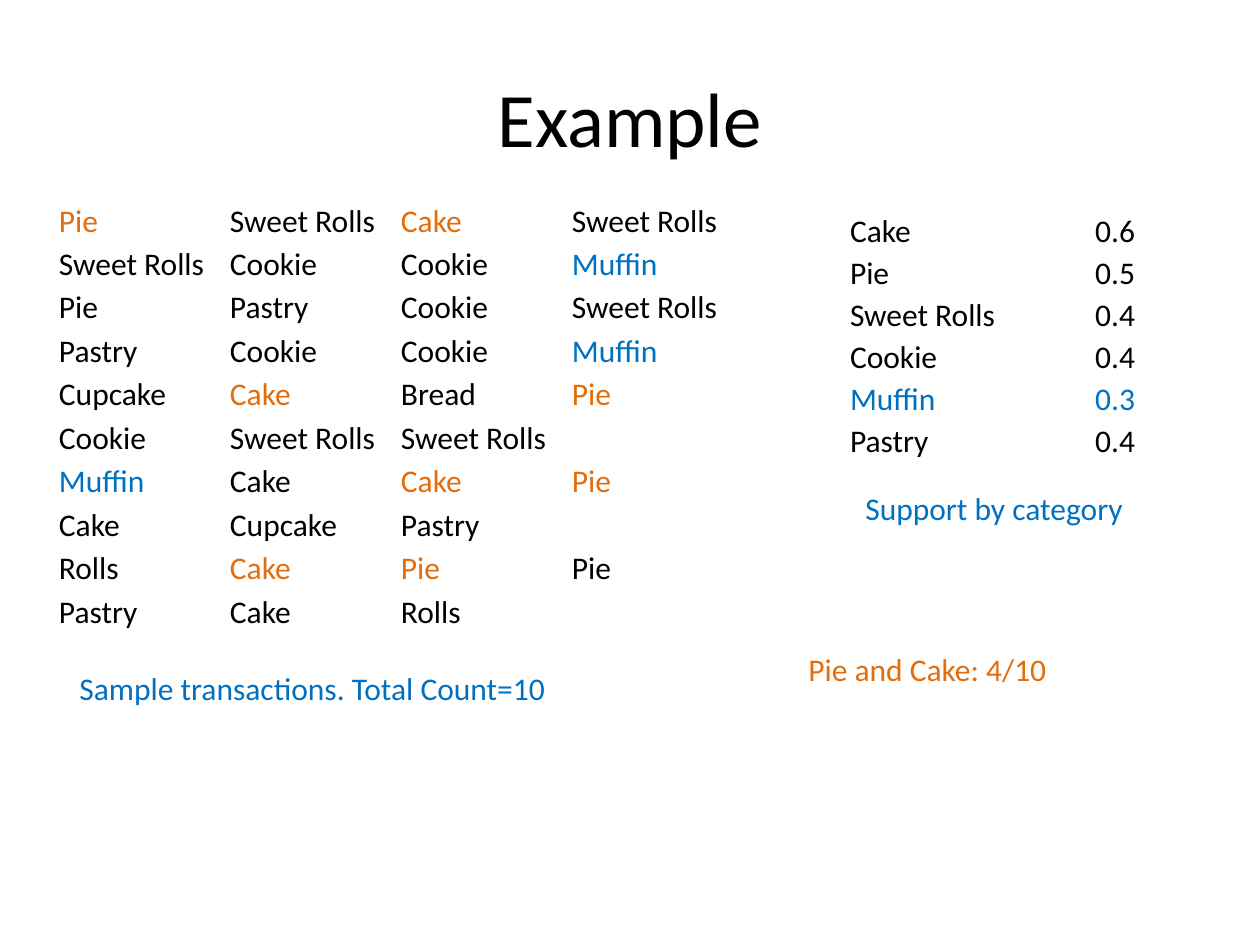
from pptx import Presentation
from pptx.dml.color import RGBColor
from pptx.enum.text import MSO_ANCHOR, PP_ALIGN
from pptx.util import Pt

LEFT, CENTER, RIGHT = PP_ALIGN.LEFT, PP_ALIGN.CENTER, PP_ALIGN.RIGHT
MIDDLE, BOTTOM = MSO_ANCHOR.MIDDLE, MSO_ANCHOR.BOTTOM

COLORS = {"black": "000000", "blue": "0070C0", "orange": "E46C0A"}
FONT = "Calibri"

# Content: a plain string is black, a tuple names its colour
TITLE = "Example"
PIE, CAKE = ("Pie", "orange"), ("Cake", "orange")
MUFFIN = ("Muffin", "blue")
TRANSACTIONS = [
    [PIE, "Sweet Rolls", CAKE, "Sweet Rolls"],
    ["Sweet Rolls", "Cookie", "Cookie", MUFFIN],
    ["Pie", "Pastry", "Cookie", "Sweet Rolls"],
    ["Pastry", "Cookie", "Cookie", MUFFIN],
    ["Cupcake", CAKE, "Bread", PIE],
    ["Cookie", "Sweet Rolls", "Sweet Rolls", ""],
    [MUFFIN, "Cake", CAKE, PIE],
    ["Cake", "Cupcake", "Pastry", ""],
    ["Rolls", CAKE, PIE, "Pie"],
    ["Pastry", "Cake", "Rolls", ""],
]
SUPPORT = [
    ["Cake", "0.6"],
    ["Pie", "0.5"],
    ["Sweet Rolls", "0.4"],
    ["Cookie", "0.4"],
    [MUFFIN, ("0.3", "blue")],
    ["Pastry", "0.4"],
]
# Rows, left, top, height, column widths, column alignments
TABLES = [
    (TRANSACTIONS, 57, 197, 435, [171] * 4, [LEFT] * 4),
    (SUPPORT, 848, 209, 252, [154, 135], [LEFT, RIGHT]),
]
# Text, colour, left, top, width
CAPTIONS = [
    ("Sample transactions. Total Count=10", "blue", 67, 663, 496),
    ("Support by category", "blue", 853, 483, 286),
    ("Pie and Cake: 4/10", "orange", 796, 644, 267),
]


def px(value):
    return round(value * 914400 / 126)


def write(text_frame, text, color="black", size=18, align=LEFT):
    text_frame.text = text
    paragraph = text_frame.paragraphs[0]
    paragraph.alignment = align
    # An empty cell has no run, so its paragraph carries the font
    for item in paragraph.runs or [paragraph]:
        item.font.name = FONT
        item.font.size = Pt(size)
        item.font.color.rgb = RGBColor.from_string(COLORS[color])


def add_plain_table(slide, rows, left, top, height, widths, alignments):
    frame = slide.shapes.add_table(len(rows), len(widths), px(left), px(top),
                                   px(sum(widths)), px(height))
    table = frame.table
    table.first_row = table.horz_banding = False
    for column, width in zip(table.columns, widths):
        column.width = px(width)
    for row_index, row in enumerate(rows):
        for column_index, entry in enumerate(row):
            text, color = entry if isinstance(entry, tuple) else (entry, "black")
            cell = table.cell(row_index, column_index)
            cell.fill.background()
            cell.vertical_anchor = BOTTOM
            cell.margin_left = cell.margin_right = cell.margin_top = px(2)
            cell.margin_bottom = 0
            write(cell.text_frame, text, color, align=alignments[column_index])


presentation = Presentation()
presentation.slide_width, presentation.slide_height = px(1260), px(945)
slide = presentation.slides.add_slide(presentation.slide_layouts[5])

# Title
title = slide.shapes.title
title.left, title.top, title.width, title.height = map(px, (63, 38, 1134, 158))
title.text_frame.vertical_anchor = MIDDLE
write(title.text_frame, TITLE, size=44, align=CENTER)

# Tables
for table_layout in TABLES:
    add_plain_table(slide, *table_layout)

# Captions
for text, color, left, top, width in CAPTIONS:
    caption = slide.shapes.add_textbox(px(left), px(top), px(width), px(50))
    caption.text_frame.word_wrap = False
    write(caption.text_frame, text, color)

presentation.save("out.pptx")
